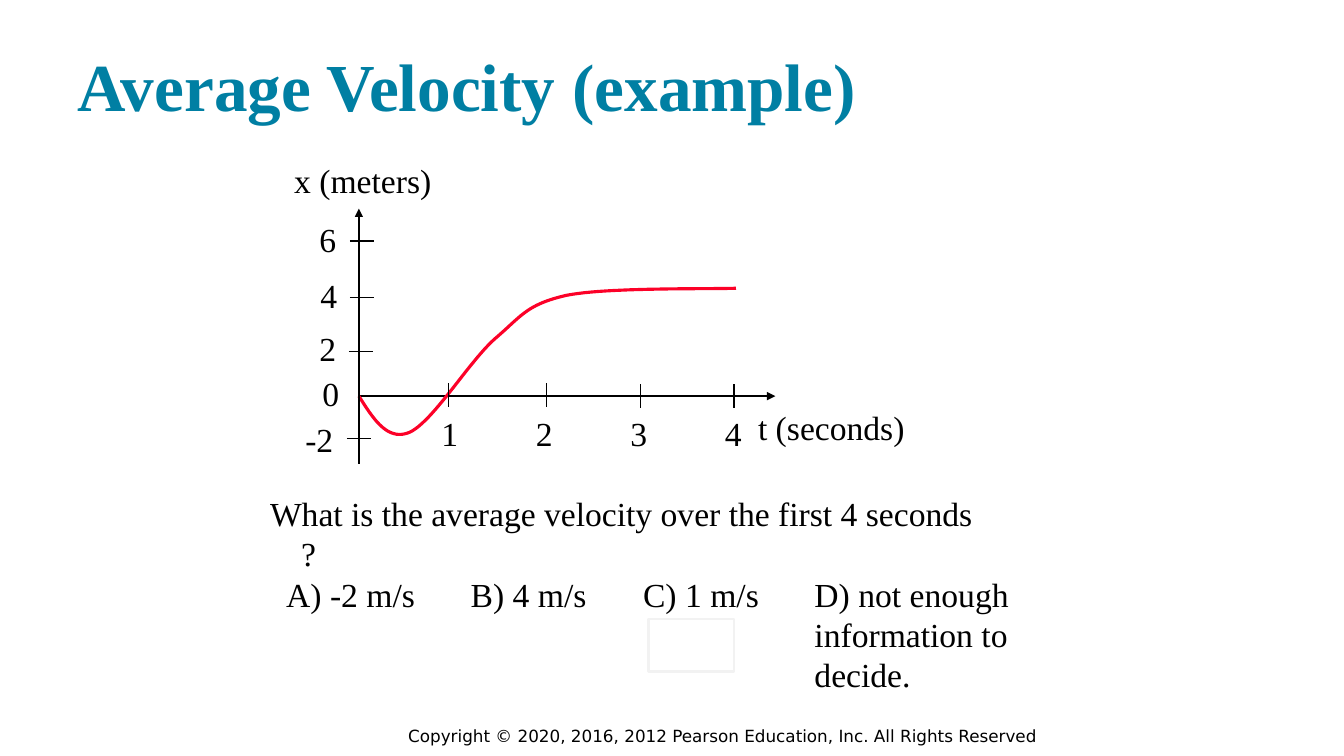
from lxml.etree import SubElement
from pptx import Presentation
from pptx.dml.color import RGBColor
from pptx.enum.shapes import MSO_CONNECTOR, MSO_SHAPE
from pptx.enum.text import MSO_ANCHOR
from pptx.oxml.ns import qn
from pptx.util import Inches, Pt

# The slide is a grid of 1333 columns by 750 rows
CELL = Inches(0.01)
COLS, ROWS = 1333, 750
SERIF = "Times New Roman"


def add_text(text, col, row, cols, rows=50, size=24, font=SERIF,
             color="000000", bold=False, wrap=False, anchor=MSO_ANCHOR.TOP):
    sp = s.shapes.add_textbox(col * CELL, row * CELL, cols * CELL, rows * CELL)
    tf = sp.text_frame
    tf.word_wrap = wrap
    tf.vertical_anchor = anchor
    tf.text = text
    for p in tf.paragraphs:
        f = p.runs[0].font
        f.name, f.size, f.bold = font, Pt(size), bold
        f.color.rgb = RGBColor.from_string(color)
    return tf


def add_line(col1, row1, col2, row2, arrow=False):
    c = s.shapes.add_connector(MSO_CONNECTOR.STRAIGHT, col1 * CELL, row1 * CELL,
                               col2 * CELL, row2 * CELL)
    c.line.color.rgb = RGBColor.from_string("000000")
    c.line.width = Pt(1)
    if arrow:
        SubElement(c.line._get_or_add_ln(), qn("a:tailEnd"), type="triangle")
    SubElement(c._element.spPr, qn("a:effectLst"))


prs = Presentation()
prs.slide_width, prs.slide_height = COLS * CELL, ROWS * CELL
s = prs.slides.add_slide(prs.slide_layouts[6])

# Footer and title
add_text("Copyright © 2020, 2016, 2012 Pearson Education, Inc. All Rights Reserved",
         395, 711, 872, 38, size=12, font="DejaVu Sans", wrap=True,
         anchor=MSO_ANCHOR.MIDDLE)
add_text("Average Velocity (example)", 67, 24, 1200, 120, size=48,
         color="007FA3", bold=True, wrap=True, anchor=MSO_ANCHOR.MIDDLE)

# Axes with their names
X0, Y0 = 356, 393
add_line(X0, 460, X0, 207, arrow=True)
add_line(X0, Y0, 769, Y0, arrow=True)
add_text("x (meters)", 282, 154, 156)
add_text("t (seconds)", 742, 399, 165)

# Position curve: cubic Bezier pieces, each starting where the last ended
pieces = [((370, 415), (384, 438), (406, 429)),
          ((429, 419), (465, 359), (491, 336)),
          ((517, 314), (522, 302), (562, 293)),
          ((602, 285), (702, 287), (730, 286))]
STEPS = 24
start = (X0, Y0)
points = []
for c1, c2, end in pieces:
    for i in range(1, STEPS + 1):
        t = i / STEPS
        u = 1 - t
        points.append(tuple(
            CELL * (u**3 * a + 3 * u**2 * t * b + 3 * u * t**2 * c + t**3 * d)
            for a, b, c, d in zip(start, c1, c2, end)))
    start = end
fb = s.shapes.build_freeform(X0 * CELL, Y0 * CELL)
fb.add_line_segments(points, close=False)
sp = fb.convert_to_shape()
sp.shadow.inherit = False
sp.fill.background()
sp.line.color.rgb = RGBColor.from_string("FC0128")
sp.line.width = Pt(2.25)

# Ticks
TICK = 24
for col, row in [(344, 435), (346, 349), (347, 295), (347, 239)]:
    add_line(col, row, col + TICK, row)
for col, row in [(X0, 381), (445, 380), (542, 380), (635, 381), (728, 381)]:
    add_line(col, row, col, row + TICK)

# Tick labels
for text, col, row, cols in [("6", 307, 212, 37), ("4", 308, 268, 37),
                             ("2", 307, 320, 37), ("0", 310, 365, 37),
                             ("-2", 293, 411, 48)]:
    add_text(text, col, row, cols)
for i in range(4):
    add_text(str(i + 1), 428 + 93.67 * i, 405, 37)

# Question with a hanging indent
tf = add_text("What is the average velocity over the first 4 seconds ?",
              258, 484, 720, wrap=True)
pPr = tf.paragraphs[0]._p.get_or_add_pPr()
pPr.set("marL", str(31 * CELL))
pPr.set("indent", str(-31 * CELL))

# Answers
ANSWER_ROW = 564
for text, col, cols in [("A) -2 m/s", 274, 148), ("B) 4 m/s", 457, 135),
                        ("C) 1 m/s", 628, 135)]:
    add_text(text, col, ANSWER_ROW, cols)
add_text("D) not enough\ninformation to\ndecide.", 798, ANSWER_ROW, 223, 131, wrap=True)

# Empty box under answer C
sp = s.shapes.add_shape(MSO_SHAPE.RECTANGLE, 643 * CELL, 614 * CELL, 85 * CELL, 52 * CELL)
sp.shadow.inherit = False
sp.fill.solid()
sp.fill.fore_color.rgb = RGBColor.from_string("FFFFFF")
sp.line.color.rgb = RGBColor.from_string("F2F2F2")
sp.line.width = Pt(2)

prs.save("out.pptx")
